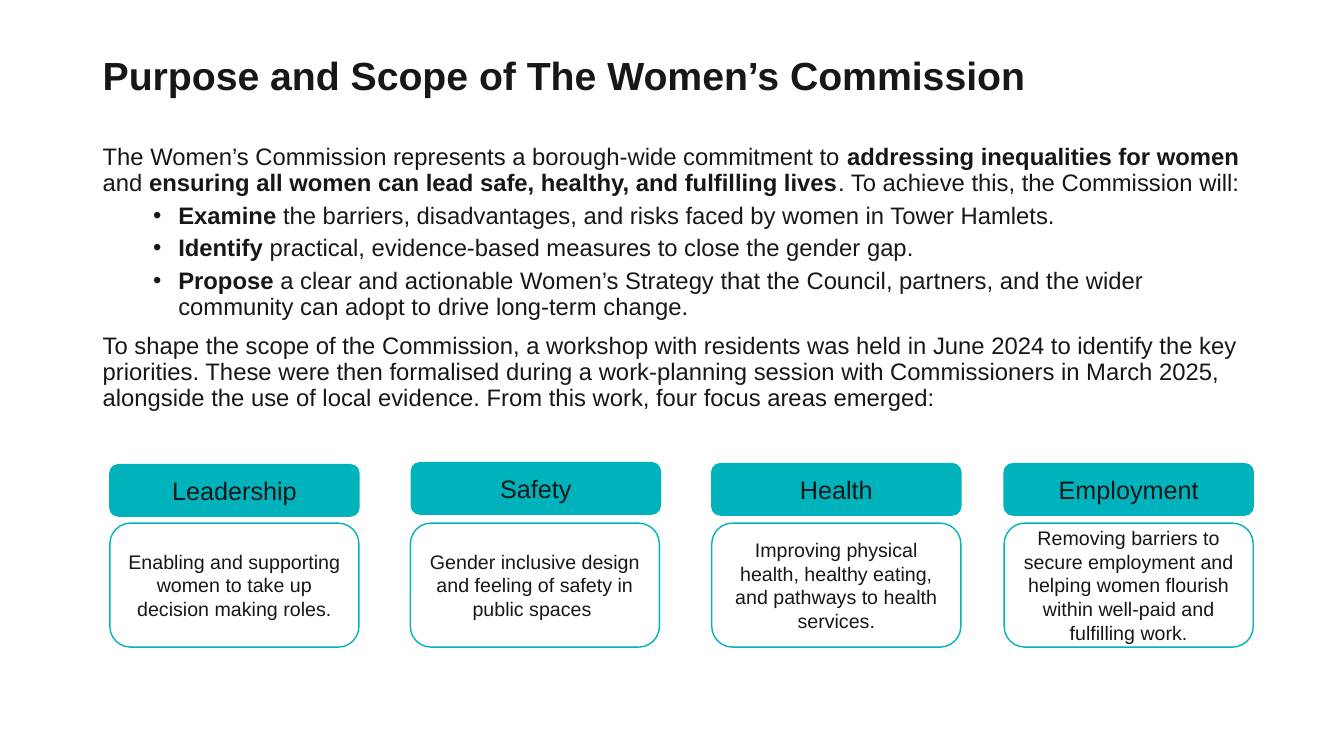
"""Build the slide on the purpose and scope of the Women's Commission."""
from lxml.etree import SubElement
from pptx import Presentation
from pptx.dml.color import RGBColor
from pptx.enum.shapes import MSO_SHAPE
from pptx.enum.text import MSO_ANCHOR, PP_ALIGN
from pptx.oxml.ns import qn
from pptx.util import Inches, Pt

INK = "181717"
TEAL = "00B2BC"


def colour(value):
    return RGBColor.from_string(value)


def add_span(para, text, size, bold=False):
    span = para.add_run()
    span.text = text
    span.font.name = "Arial"
    span.font.size = Pt(size)
    span.font.bold = bold
    span.font.color.rgb = colour(INK)


deck = Presentation()
deck.slide_width = Inches(13.33)
deck.slide_height = Inches(7.5)
page = deck.slides.add_slide(deck.slide_layouts[6])

title = page.shapes.add_textbox(Inches(0.92), Inches(0.38), Inches(10.69), Inches(0.78))
title.text_frame.word_wrap = True
title.text_frame.vertical_anchor = MSO_ANCHOR.MIDDLE
heading = title.text_frame.paragraphs[0]
heading.line_spacing = 0.9
add_span(heading, "Purpose and Scope of The Women’s Commission", 28, True)

body_paragraphs = [
    (False, [
        ("The Women’s Commission represents a borough-wide commitment to ", False),
        ("addressing inequalities for women ", True),
        ("and ", False),
        ("ensuring all women can lead safe, healthy, and fulfilling lives", True),
        (". To achieve this, the Commission will:", False),
    ]),
    (True, [
        ("Examine", True),
        (" the barriers, disadvantages, and risks faced by women in Tower Hamlets.", False),
    ]),
    (True, [
        ("Identify", True),
        (" practical, evidence-based measures to close the gender gap.", False),
    ]),
    (True, [
        ("Propose", True),
        (" a clear and actionable Women’s Strategy that the Council, partners, and the wider "
         "community can adopt to drive long-term change.", False),
    ]),
    (False, [
        ("To shape the scope of the Commission, a workshop with residents was held in June 2024 "
         "to identify the key priorities. These were then formalised during a work-planning "
         "session with Commissioners in March 2025, alongside the use of local evidence. "
         "From this work, four focus areas emerged:", False),
    ]),
]
body = page.shapes.add_textbox(Inches(0.92), Inches(1.39), Inches(11.5), Inches(2.92))
body.text_frame.word_wrap = True
for index, (bulleted, spans) in enumerate(body_paragraphs):
    para = body.text_frame.add_paragraph() if index else body.text_frame.paragraphs[0]
    para.line_spacing = 0.9
    para.space_before = Pt(5 if bulleted else 10)
    if bulleted:
        para.level = 1
        properties = para._p.get_or_add_pPr()
        properties.set("marL", str(Inches(0.75)))
        properties.set("indent", str(Inches(-0.25)))
        SubElement(properties, qn("a:buFont"), typeface="Arial")
        SubElement(properties, qn("a:buChar"), char="•")
    for text, bold in spans:
        add_span(para, text, 17, bold)

focus_areas = [
    ("Leadership", 1.09, 4.61, 1.09,
     "Enabling and supporting women to take up decision making roles."),
    ("Safety", 4.08, 4.59, 4.07,
     "Gender inclusive design and feeling of safety in public spaces "),
    ("Health", 7.06, 4.6, 7.06,
     "Improving physical health, healthy eating, and pathways to health services."),
    ("Employment", 9.96, 4.6, 9.96,
     "Removing barriers to secure employment and helping women flourish within well-paid "
     "and fulfilling work."),
]
for name, name_left, name_top, detail_left, detail in focus_areas:
    for text, left, top, height, size, filled in (
        (name, name_left, name_top, 0.51, 18, True),
        (detail, detail_left, 5.19, 1.23, 14, False),
    ):
        box = page.shapes.add_shape(MSO_SHAPE.ROUNDED_RECTANGLE, Inches(left), Inches(top),
                                    Inches(2.47), Inches(height))
        box.shadow.inherit = False
        if filled:
            box.fill.solid()
            box.fill.fore_color.rgb = colour(TEAL)
        else:
            box.fill.background()
        box.line.color.rgb = colour(TEAL)
        box.line.width = Pt(1)
        box.text_frame.word_wrap = True
        box.text_frame.vertical_anchor = MSO_ANCHOR.MIDDLE
        para = box.text_frame.paragraphs[0]
        para.alignment = PP_ALIGN.CENTER
        add_span(para, text, size)

deck.save("out.pptx")
